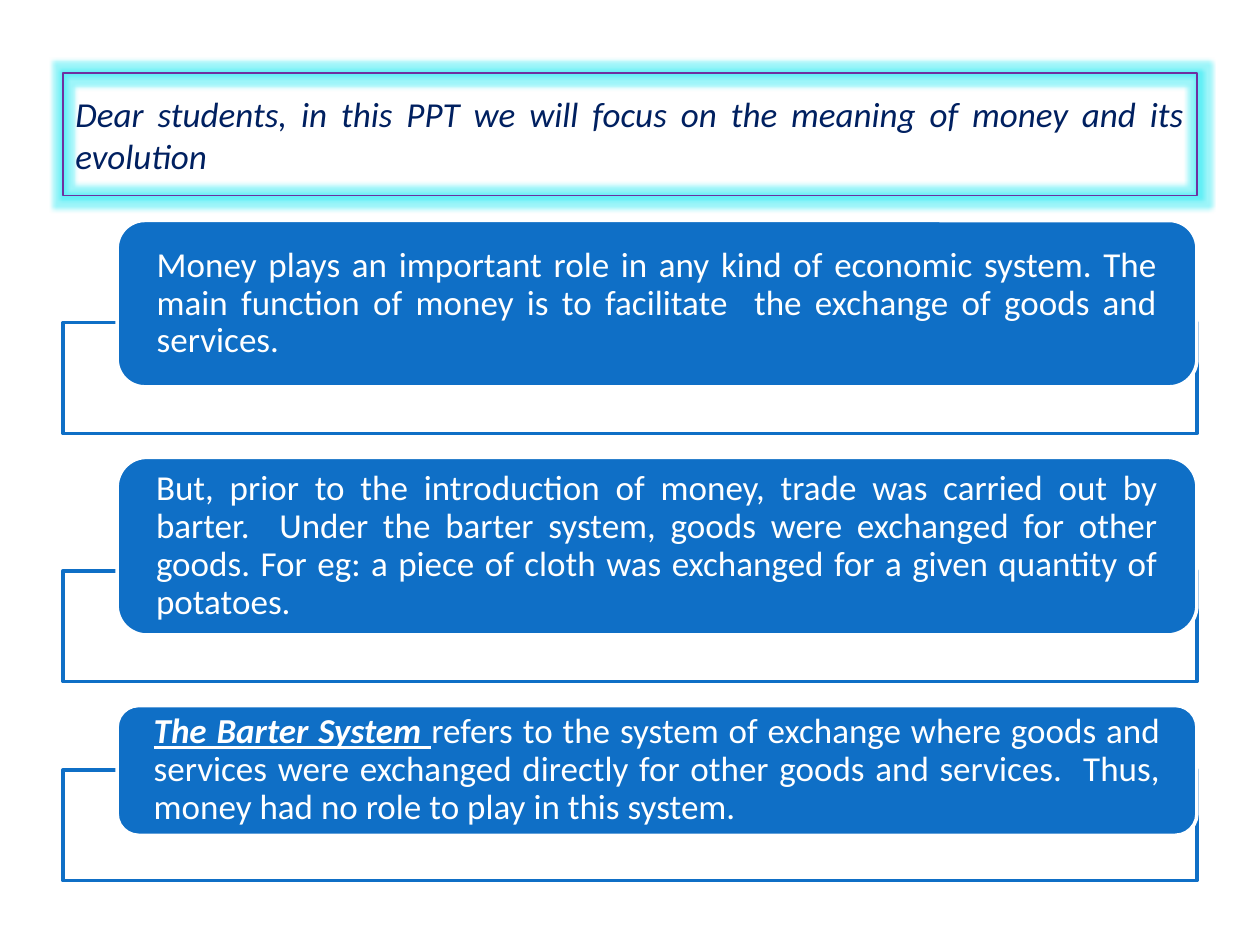
from lxml import etree
from pptx import Presentation
from pptx.dml.color import RGBColor
from pptx.enum.shapes import MSO_SHAPE
from pptx.enum.text import MSO_ANCHOR, PP_ALIGN
from pptx.oxml.ns import qn
from pptx.util import Inches, Pt

RECT, ROUNDED = MSO_SHAPE.RECTANGLE, MSO_SHAPE.ROUNDED_RECTANGLE
MIDDLE, JUSTIFY = MSO_ANCHOR.MIDDLE, PP_ALIGN.JUSTIFY
BLUE = RGBColor(0x0F, 0x6F, 0xC6)
NAVY = RGBColor(0x00, 0x20, 0x60)
PURPLE = RGBColor(0x70, 0x30, 0xA0)
WHITE = RGBColor(0xFF, 0xFF, 0xFF)
GLOW = "0CE7F2"

# frame top, card top, card height, side inset, runs as (text, emphasised)
CARDS = [
    (2.56, 1.75, 1.32, 0.31, [
        ("Money plays an important role in any kind of economic system. The main "
         "function of money is to facilitate  the exchange of goods and services. ", False)]),
    (4.53, 3.63, 1.41, 0.31, [
        ("But, prior to the introduction of money, trade was carried out by barter.  "
         "Under the barter system, goods were exchanged for other goods. For eg: a piece "
         "of cloth was exchanged for a given quantity of potatoes. ", False)]),
    (6.11, 5.6, 1.03, 0.29, [
        ("The Barter System ", True),
        ("refers to the system of exchange where goods and services were exchanged "
         "directly for other goods and services.  Thus, money had no role to play in "
         "this system. ", False)]),
]


def add_box(kind, left, top, width, height, fill, line, weight):
    sp = s.shapes.add_shape(kind, Inches(left), Inches(top), Inches(width), Inches(height))
    sp.shadow.inherit = False
    if fill is None:
        sp.fill.background()
    else:
        sp.fill.solid()
        sp.fill.fore_color.rgb = fill
    sp.line.color.rgb = line
    sp.line.width = Pt(weight)
    return sp


def add_run(p, text, color):
    r = p.add_run()
    r.text = text
    r.font.name = "Calibri"
    r.font.size = Pt(20)
    r.font.color.rgb = color
    return r


prs = Presentation()
prs.slide_width, prs.slide_height = Inches(10), Inches(7.5)
s = prs.slides.add_slide(prs.slide_layouts[6])

title = add_box(RECT, 0.5, 0.58, 9, 0.97, None, PURPLE, 0.75)
effects = title._element.spPr.find(qn("a:effectLst"))
glow = etree.SubElement(effects, qn("a:glow"), rad=str(Pt(5)))
color = etree.SubElement(glow, qn("a:srgbClr"), val=GLOW)
etree.SubElement(color, qn("a:alpha"), val="40000")
tf = title.text_frame
tf.word_wrap = True
tf.vertical_anchor = MIDDLE
p = tf.paragraphs[0]
p.alignment = JUSTIFY
r = add_run(p, "Dear students, in this PPT we will focus on the meaning of money "
               "and its evolution", NAVY)
r.font.italic = True

for frame_top, card_top, card_height, inset, runs in CARDS:
    frame = add_box(RECT, 0.5, frame_top, 9, 0.88, WHITE, BLUE, 2)
    fill_color = frame._element.spPr.find(qn("a:solidFill"))[0]
    etree.SubElement(fill_color, qn("a:alpha"), val="90000")

    card = add_box(ROUNDED, 0.93, card_top, 8.57, card_height, BLUE, WHITE, 2)
    tf = card.text_frame
    tf.word_wrap = True
    tf.vertical_anchor = MIDDLE
    # The preset adds its own corner inset, which depends on the card height
    corner = 0.29 * card.adjustments[0] * card_height
    tf.margin_left = tf.margin_right = Inches(round(inset - corner, 2))
    tf.margin_top = tf.margin_bottom = 0
    p = tf.paragraphs[0]
    p.alignment = JUSTIFY
    p.line_spacing = 0.9
    for text, emphasised in runs:
        r = add_run(p, text, WHITE)
        if emphasised:
            r.font.bold = r.font.italic = r.font.underline = True

prs.save("out.pptx")
